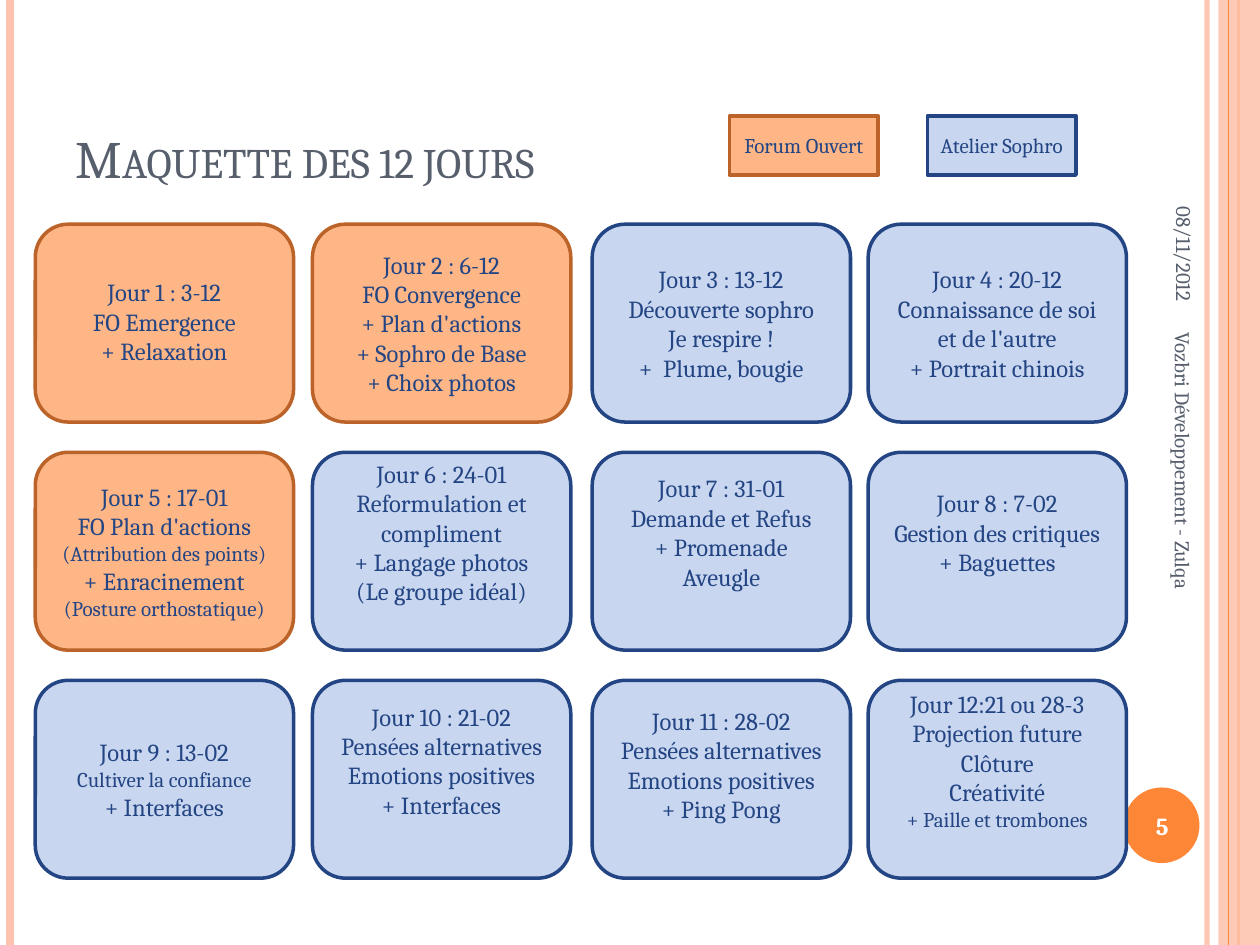
from lxml import etree
from pptx import Presentation
from pptx.dml.color import RGBColor
from pptx.enum import shapes, text
from pptx.oxml.ns import qn
from pptx.util import Inches, Pt

FONT = "Cambria"
ORANGE = RGBColor(0xFE, 0x86, 0x37)
PEACH = RGBColor(0xFE, 0xC3, 0xAE)
FORUM_FILL = RGBColor(0xFE, 0xB6, 0x87)
FORUM_LINE = RGBColor(0xBC, 0x63, 0x29)
SOPHRO_FILL = RGBColor(0xC8, 0xD6, 0xF0)
NAVY = RGBColor(0x24, 0x45, 0x83)
SLATE = RGBColor(0x57, 0x5F, 0x6D)
WHITE = RGBColor(0xFF, 0xFF, 0xFF)

FORUM = (FORUM_FILL, FORUM_LINE)
SOPHRO = (SOPHRO_FILL, NAVY)
COLUMN_LEFTS = (0.28, 2.48, 4.7, 6.89)
FIRST_ROW_TOP, ROW_STEP = 1.78, 1.81
CARD_WIDTH, CARD_HEIGHT = 2.05, 1.57

# Style, bottom inset in inches, lines, numbers of the lines in small type
DAYS = [
    (FORUM, 0.03, "Jour 1 : 3-12\nFO Emergence\n+ Relaxation", ()),
    (FORUM, 0, "Jour 2 : 6-12\nFO Convergence\n+ Plan d'actions\n"
     "+ Sophro de Base\n+ Choix photos", ()),
    (SOPHRO, 0, "Jour 3 : 13-12\nDécouverte sophro\nJe respire !\n+  Plume, bougie", ()),
    (SOPHRO, 0, "Jour 4 : 20-12\nConnaissance de soi et de l'autre\n+ Portrait chinois", ()),
    (FORUM, 0, "Jour 5 : 17-01\nFO Plan d'actions\n(Attribution des points)\n"
     "+ Enracinement\n(Posture orthostatique)", (2, 4)),
    (SOPHRO, 0.3, "Jour 6 : 24-01\nReformulation et compliment\n"
     "+ Langage photos\n(Le groupe idéal)", ()),
    (SOPHRO, 0.3, "Jour 7 : 31-01\nDemande et Refus\n+ Promenade Aveugle", ()),
    (SOPHRO, 0.3, "Jour 8 : 7-02\nGestion des critiques\n+ Baguettes", ()),
    (SOPHRO, 0, "Jour 9 : 13-02\nCultiver la confiance\n+ Interfaces", (1,)),
    (SOPHRO, 0.3, "Jour 10 : 21-02\nPensées alternatives\nEmotions positives\n+ Interfaces", ()),
    (SOPHRO, 0.23, "Jour 11 : 28-02\nPensées alternatives\nEmotions positives\n+ Ping Pong", ()),
    (SOPHRO, 0.3, "Jour 12:21 ou 28-3\nProjection future\nClôture\nCréativité\n"
     "+ Paille et trombones", (4,)),
]


def set_opacity(color_format_parent, percent):
    color = color_format_parent.find(".//" + qn("a:srgbClr"))
    etree.SubElement(color, qn("a:alpha"), val=str(percent * 1000))


def write(shape, content, size, color, align, bold=False, small_lines=()):
    frame = shape.text_frame
    frame.word_wrap = True
    frame.vertical_anchor = text.MSO_ANCHOR.MIDDLE
    frame.text = content
    for number, para in enumerate(frame.paragraphs):
        para.alignment = align
        for span in para.runs:
            span.font.name = FONT
            span.font.size = Pt(12 if number in small_lines else size)
            span.font.bold = bold
            span.font.color.rgb = color


def add_rule(page, x, width, color, opacity=100):
    """Draw a vertical line over the full height of the page."""
    rule = page.shapes.add_connector(
        shapes.MSO_CONNECTOR.STRAIGHT, Inches(x), 0, Inches(x), Inches(7.5))
    rule.line.width = Pt(width)
    rule.line.color.rgb = color
    properties = rule._element.spPr
    if opacity < 100:
        set_opacity(properties, opacity)
    etree.SubElement(properties, qn("a:effectLst"))


def add_filled(page, kind, bounds, fill, line=None):
    shape = page.shapes.add_shape(kind, *map(Inches, bounds))
    shape.shadow.inherit = False
    shape.fill.solid()
    shape.fill.fore_color.rgb = fill
    if line is None:
        shape.line.fill.background()
    else:
        shape.line.color.rgb = line
        shape.line.width = Pt(2)
    return shape


def add_label(page, bounds, content, size, color, align, rotation=0, bold=False):
    box = page.shapes.add_textbox(*map(Inches, bounds))
    box.rotation = rotation
    write(box, content, size, color, align, bold)


def add_frame(page):
    add_rule(page, 9.58, 3, PEACH, 93)
    add_rule(page, 0.08, 4.5, PEACH)
    add_rule(page, 9.83, 1.5, ORANGE)
    band = add_filled(page, shapes.MSO_SHAPE.RECTANGLE, (9.67, 0, 0.33, 7.5), PEACH)
    set_opacity(band._element.spPr, 87)
    add_rule(page, 9.75, 0.75, ORANGE)
    add_filled(page, shapes.MSO_SHAPE.OVAL, (8.92, 6.25, 0.6, 0.6), ORANGE)


def add_title(page, content):
    title = page.shapes.title
    title.left, title.top, title.width, title.height = map(Inches, (0.5, 0.3, 8.17, 1.25))
    write(title, content, 30, SLATE, text.PP_ALIGN.LEFT)
    title.text_frame.auto_size = text.MSO_AUTO_SIZE.NONE
    title.text_frame.vertical_anchor = text.MSO_ANCHOR.BOTTOM
    title.text_frame.paragraphs[0].runs[0].font._element.set("cap", "small")


def add_day(page, index, style, bottom_inset, content, small_lines):
    row, column = divmod(index, len(COLUMN_LEFTS))
    bounds = (COLUMN_LEFTS[column], FIRST_ROW_TOP + row * ROW_STEP, CARD_WIDTH, CARD_HEIGHT)
    card = add_filled(page, shapes.MSO_SHAPE.ROUNDED_RECTANGLE, bounds, *style)
    write(card, content, 14, NAVY, text.PP_ALIGN.CENTER, small_lines=small_lines)
    card.text_frame.margin_top = 0
    card.text_frame.margin_bottom = Inches(bottom_inset)


def add_legend(page, left, style, content):
    key = add_filled(page, shapes.MSO_SHAPE.RECTANGLE, (left, 0.92, 1.18, 0.47), *style)
    write(key, content, 12, NAVY, text.PP_ALIGN.CENTER)


def main():
    deck = Presentation()
    deck.slide_width, deck.slide_height = Inches(10), Inches(7.5)
    page = deck.slides.add_slide(deck.slide_layouts[5])
    add_frame(page)
    add_title(page, "Maquette des 12 jours")
    add_label(page, (8.3, 1.18, 2.2, 0.42), "08/11/2012", 12, SLATE,
              text.PP_ALIGN.RIGHT, rotation=90)
    add_label(page, (8.89, 6.27, 0.67, 0.57), "5", 14, WHITE,
              text.PP_ALIGN.CENTER, bold=True)
    add_label(page, (7.64, 4.09, 3.5, 0.4), "Vozbri Développement - Zulqa", 12, SLATE,
              text.PP_ALIGN.LEFT, rotation=90)
    for index, day in enumerate(DAYS):
        add_day(page, index, *day)
    add_legend(page, 5.79, FORUM, "Forum Ouvert")
    add_legend(page, 7.36, SOPHRO, "Atelier Sophro")
    deck.save("out.pptx")


if __name__ == "__main__":
    main()
